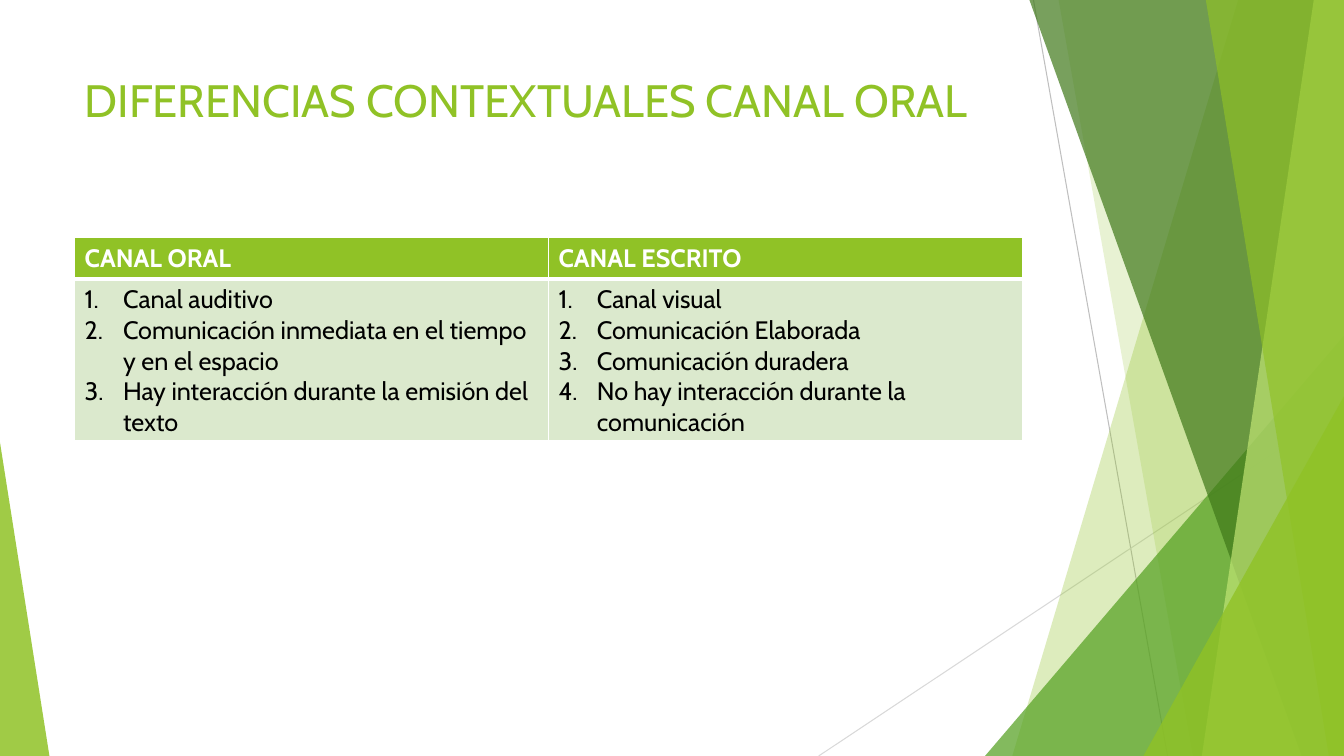
from lxml.etree import SubElement
from pptx import Presentation
from pptx.dml.color import RGBColor
from pptx.enum.shapes import MSO_CONNECTOR, MSO_SHAPE
from pptx.enum.text import MSO_ANCHOR
from pptx.oxml.ns import qn
from pptx.util import Inches, Pt

WIDTH, HEIGHT = 13.33, 7.5
FONT = "Cabin"
COLORS = {
    "lime": "90C226",
    "green": "54A021",
    "forest": "3F7819",
    "pale": "C0E474",
    "cell": "DBE9CD",
    "grey": "BFBFBF",
    "silver": "D9D9D9",
    "white": "FFFFFF",
    "black": "000000",
}
TABLE = {
    "CANAL ORAL": [
        "Canal auditivo",
        "Comunicación inmediata en el tiempo y en el espacio",
        "Hay interacción durante la emisión del texto",
    ],
    "CANAL ESCRITO": [
        "Canal visual",
        "Comunicación Elaborada",
        "Comunicación duradera",
        "No hay interacción durante la comunicación",
    ],
}


def rgb(name):
    return RGBColor.from_string(COLORS[name])


def fill_translucent(shape, color, opacity):
    """Fill a borderless shape; opacity is a percentage."""
    shape.shadow.inherit = False
    shape.line.fill.background()
    shape.fill.solid()
    shape.fill.fore_color.rgb = rgb(color)
    fill_color = shape.element.spPr.find(qn("a:solidFill"))[0]
    SubElement(fill_color, qn("a:alpha"), val=str(opacity * 1000))


def add_thin_line(slide, start, end, color):
    points = [Inches(value) for value in (*start, *end)]
    line = slide.shapes.add_connector(MSO_CONNECTOR.STRAIGHT, *points)
    line.line.color.rgb = rgb(color)
    line.line.width = Pt(0.75)
    SubElement(line.element.spPr, qn("a:effectLst"))


def add_band(slide, top_x, bottom_x, color, opacity):
    """Add a full-height band from a slanted left edge to the slide's right edge."""
    corners = [(WIDTH, 0), (WIDTH, HEIGHT), (bottom_x, HEIGHT)]
    builder = slide.shapes.build_freeform(Inches(top_x), 0)
    builder.add_line_segments([(Inches(x), Inches(y)) for x, y in corners])
    fill_translucent(builder.convert_to_shape(), color, opacity)


def add_corner_triangle(slide, left, top, width, apex, color, opacity):
    """Add a triangle on the bottom edge; apex runs from 0 (left) to 1 (right)."""
    box = [Inches(value) for value in (left, top, width, HEIGHT - top)]
    triangle = slide.shapes.add_shape(MSO_SHAPE.ISOSCELES_TRIANGLE, *box)
    triangle.adjustments[0] = apex
    fill_translucent(triangle, color, opacity)


def write(paragraph, text, size, color, bold=False):
    run = paragraph.add_run()
    run.text = text
    font_format = {"name": FONT, "size": Pt(size), "bold": bold}
    for attribute, value in font_format.items():
        setattr(run.font, attribute, value)
    run.font.color.rgb = rgb(color)


def add_title(slide, text):
    box = slide.shapes.add_textbox(Inches(0.74), Inches(0.67), Inches(9.4), Inches(1.44))
    box.text_frame.word_wrap = True
    box.text_frame.vertical_anchor = MSO_ANCHOR.TOP
    write(box.text_frame.paragraphs[0], text, 32.4, "lime")


def style_cell(cell, color, border_widths):
    """Set the fill and the white borders, with widths in points by side."""
    properties = cell._tc.get_or_add_tcPr()
    for side, width in border_widths.items():
        border = SubElement(properties, qn(f"a:ln{side}"), w=str(Pt(width)))
        fill = SubElement(border, qn("a:solidFill"))
        SubElement(fill, qn("a:srgbClr"), val=COLORS["white"])
    cell.fill.solid()
    cell.fill.fore_color.rgb = rgb(color)


def write_numbered(text_frame, items):
    for index, item in enumerate(items):
        paragraph = text_frame.add_paragraph() if index else text_frame.paragraphs[0]
        properties = paragraph._p.get_or_add_pPr()
        indent = Inches(0.38)
        properties.set("marL", str(indent))
        properties.set("indent", str(-indent))
        SubElement(properties, qn("a:buFont"), typeface="+mj-lt")
        SubElement(properties, qn("a:buAutoNum"), type="arabicPeriod")
        write(paragraph, item, 18, "black")


def add_comparison_table(slide, content):
    row_heights = (0.41, 1.6)
    frame = slide.shapes.add_table(
        len(row_heights), len(content),
        Inches(0.74), Inches(2.36), Inches(9.4), Inches(sum(row_heights)),
    )
    table = frame.table
    table.horz_banding = False
    for row, height in zip(table.rows, row_heights):
        row.height = Inches(height)
    for column, (heading, items) in enumerate(content.items()):
        header, body = table.cell(0, column), table.cell(1, column)
        style_cell(header, "lime", {"L": 1, "R": 1, "T": 1, "B": 3})
        style_cell(body, "cell", {"L": 1, "R": 1, "T": 3, "B": 1})
        write(header.text_frame.paragraphs[0], heading, 18, "white", bold=True)
        write_numbered(body.text_frame, items)


def add_decoration(slide):
    add_thin_line(slide, (10.25, 0), (11.58, HEIGHT), "grey")
    add_thin_line(slide, (WIDTH, 4.03), (8.12, HEIGHT), "silver")
    add_band(slide, 12.28, 10.04, "lime", 30)
    add_band(slide, 10.5, 11.83, "lime", 20)
    add_corner_triangle(slide, 9.77, 3.33, 3.56, 1, "green", 72)
    add_band(slide, 10.21, 12.91, "forest", 70)
    add_band(slide, 13.03, 11.92, "pale", 70)
    add_band(slide, 11.96, 13.18, "lime", 65)
    add_corner_triangle(slide, 11.34, 3.93, 1.99, 1, "lime", 80)
    add_corner_triangle(slide, 0, 4.39, 0.49, 0, "lime", 85)


def main():
    presentation = Presentation()
    presentation.slide_width = Inches(WIDTH)
    presentation.slide_height = Inches(HEIGHT)
    slide = presentation.slides.add_slide(presentation.slide_layouts[6])
    add_decoration(slide)
    add_title(slide, "DIFERENCIAS CONTEXTUALES CANAL ORAL")
    add_comparison_table(slide, TABLE)
    presentation.save("out.pptx")


if __name__ == "__main__":
    main()
